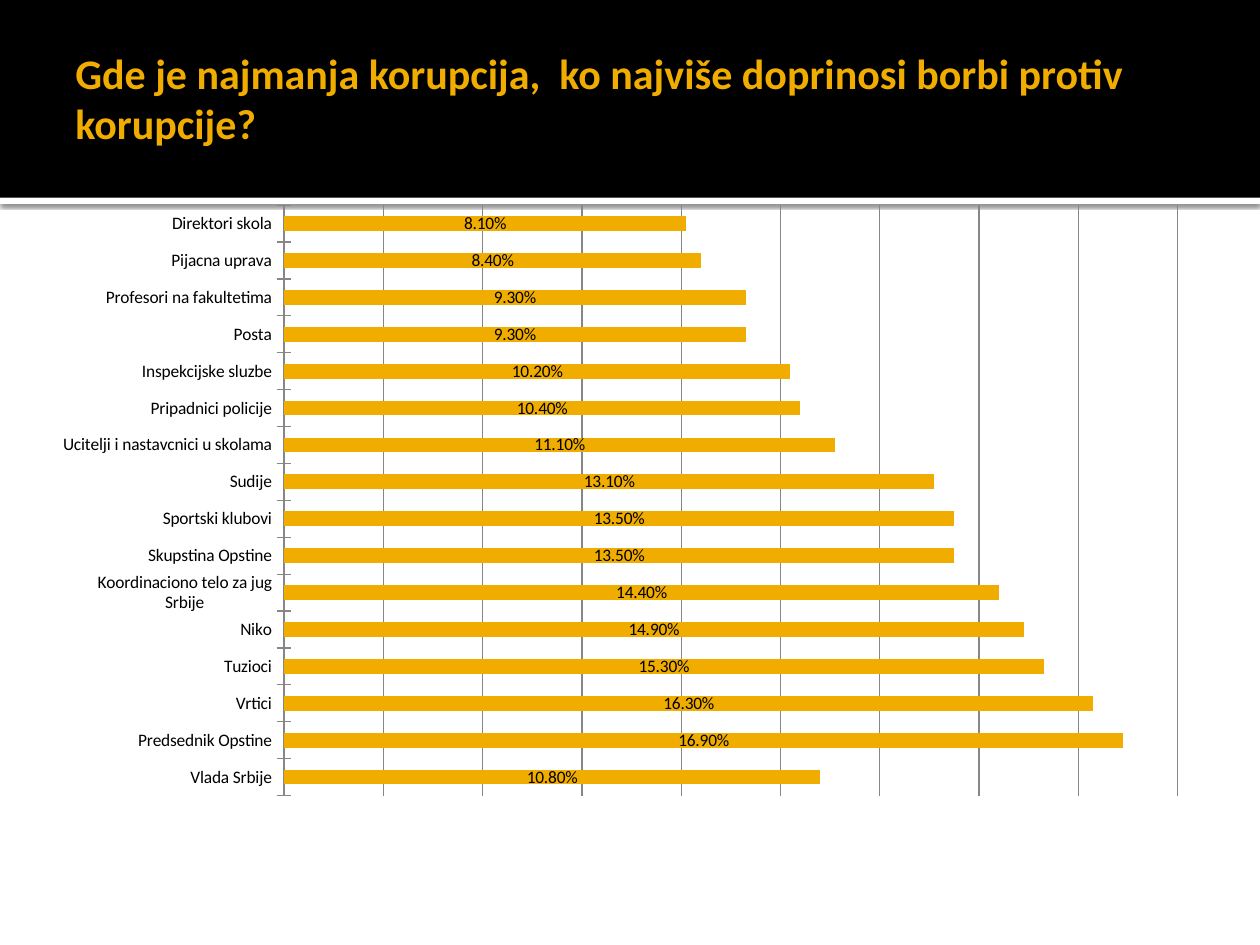
from lxml.etree import SubElement
from pptx import Presentation
from pptx.chart.data import CategoryChartData
from pptx.dml.color import RGBColor
from pptx.enum.chart import XL_CHART_TYPE, XL_LABEL_POSITION, XL_TICK_MARK
from pptx.enum.shapes import MSO_SHAPE
from pptx.enum.text import MSO_ANCHOR
from pptx.oxml import parse_xml
from pptx.oxml.ns import nsdecls, qn
from pptx.util import Pt

HEADING = "Gde je najmanja korupcija,  ko najviše doprinosi borbi protiv korupcije?"
SERIES_NAME = "Series 1"
INSTITUTIONS = [
    ("Vlada Srbije", 0.108),
    ("Predsednik Opstine", 0.169),
    ("Vrtici", 0.163),
    ("Tuzioci", 0.153),
    ("Niko", 0.149),
    ("Koordinaciono telo za jug Srbije", 0.144),
    ("Skupstina Opstine", 0.135),
    ("Sportski klubovi", 0.135),
    ("Sudije", 0.131),
    ("Ucitelji i nastavcnici u skolama", 0.111),
    ("Pripadnici policije", 0.104),
    ("Inspekcijske sluzbe", 0.102),
    ("Posta", 0.093),
    ("Profesori na fakultetima", 0.093),
    ("Pijacna uprava", 0.084),
    ("Direktori skola", 0.081),
]
THEME = {
    "font": "Calibri",
    "heading_size": Pt(24),
    "chart_size": Pt(10),
    "black": RGBColor.from_string("000000"),
    "white": RGBColor.from_string("FFFFFF"),
    "amber": RGBColor.from_string("F0AD00"),
    "grid": RGBColor.from_string("878787"),
}
PERCENT = "0.00%"
WIDTH, HEIGHT = 720, 540
MARGIN = 36
BAND_HEIGHT, STRIP_HEIGHT = 113, 3.6
CHART_TOP, CHART_HEIGHT = 106.5, 348.5
PLOT = {"x": 0.188, "y": 0.031, "w": 0.795, "h": 0.969}


def set_all(target, formats):
    """Set every attribute in formats on target."""
    for name, value in formats.items():
        setattr(target, name, value)


def add_bar(slide, top, height, color):
    """Add a full-width plain rectangle."""
    bar = slide.shapes.add_shape(MSO_SHAPE.RECTANGLE, 0, Pt(top), Pt(WIDTH), Pt(height))
    bar.shadow.inherit = False
    bar.fill.solid()
    bar.fill.fore_color.rgb = color
    bar.line.fill.background()
    return bar


def add_drop_shadow(shape):
    """Give the shape a soft shadow straight below it."""
    effects = shape._element.spPr.find(qn("a:effectLst"))
    effects.append(parse_xml(
        f'<a:outerShdw {nsdecls("a")} blurRad="{Pt(2.5)}" dist="{Pt(0.8)}" dir="5400000"'
        ' algn="tl" rotWithShape="0"><a:srgbClr val="000000"><a:alpha val="60000"/>'
        "</a:srgbClr></a:outerShdw>"))


def add_heading(slide):
    """Add the heading over the black band."""
    heading = slide.shapes.add_textbox(Pt(MARGIN), 0, Pt(WIDTH - 2 * MARGIN), Pt(111.6))
    frame = heading.text_frame
    set_all(frame, {
        "word_wrap": True, "vertical_anchor": MSO_ANCHOR.MIDDLE, "margin_left": Pt(7.2),
        "margin_right": Pt(3.6), "margin_top": Pt(3.6), "margin_bottom": Pt(3.6),
    })
    run = frame.paragraphs[0].add_run()
    run.text = HEADING
    set_all(run.font, {"name": THEME["font"], "size": THEME["heading_size"], "bold": True})
    run.font.color.rgb = THEME["amber"]


def set_plot_layout(chart):
    """Fix the inner plot area to the PLOT fractions."""
    plot_area = chart._chartSpace.chart.plotArea
    for old in plot_area.findall(qn("c:layout")):
        plot_area.remove(old)
    layout = parse_xml(f'<c:layout {nsdecls("c")}/>')
    manual = SubElement(layout, qn("c:manualLayout"))
    settings = {"layoutTarget": "inner", "xMode": "edge", "yMode": "edge", **PLOT}
    for name, value in settings.items():
        SubElement(manual, qn(f"c:{name}")).set("val", str(value))
    plot_area.insert(0, layout)


def add_ranking(slide):
    """Add the bar chart of institutions."""
    institutions, shares = zip(*INSTITUTIONS)
    ranking = CategoryChartData(number_format=PERCENT)
    ranking.categories = institutions
    ranking.add_series(SERIES_NAME, shares)
    chart = slide.shapes.add_chart(
        XL_CHART_TYPE.BAR_STACKED, Pt(MARGIN), Pt(CHART_TOP),
        Pt(WIDTH - 2 * MARGIN), Pt(CHART_HEIGHT), ranking).chart
    set_all(chart, {"has_legend": False, "has_title": False})
    set_all(chart.font, {"name": THEME["font"], "size": THEME["chart_size"]})
    chart.font.color.rgb = THEME["black"]

    set_all(chart.value_axis, {
        "visible": False, "has_major_gridlines": True, "minimum_scale": 0,
        "maximum_scale": 0.18, "major_unit": 0.02,
    })
    set_all(chart.value_axis.tick_labels,
            {"number_format": PERCENT, "number_format_is_linked": False})
    set_all(chart.category_axis, {
        "has_major_gridlines": False, "major_tick_mark": XL_TICK_MARK.CROSS,
        "minor_tick_mark": XL_TICK_MARK.NONE,
    })
    chart.category_axis.tick_labels.font.size = THEME["chart_size"]
    for line in (chart.value_axis.major_gridlines.format.line, chart.category_axis.format.line):
        line.color.rgb = THEME["grid"]
        line.width = Pt(0.75)

    plot = chart.plots[0]
    set_all(plot, {"gap_width": 150, "overlap": 100, "vary_by_categories": False,
                   "has_data_labels": True})
    set_all(plot.data_labels, {
        "show_value": True, "number_format": PERCENT, "number_format_is_linked": False,
        "position": XL_LABEL_POSITION.CENTER,
    })
    fill = plot.series[0].format.fill
    fill.solid()
    fill.fore_color.rgb = THEME["amber"]
    set_plot_layout(chart)


def main():
    """Build and save the slide."""
    deck = Presentation()
    set_all(deck, {"slide_width": Pt(WIDTH), "slide_height": Pt(HEIGHT)})
    slide = deck.slides.add_slide(deck.slide_layouts[6])
    add_drop_shadow(add_bar(slide, BAND_HEIGHT, STRIP_HEIGHT, THEME["white"]))
    add_bar(slide, 0, BAND_HEIGHT, THEME["black"])
    add_heading(slide)
    add_ranking(slide)
    deck.save("out.pptx")


if __name__ == "__main__":
    main()
